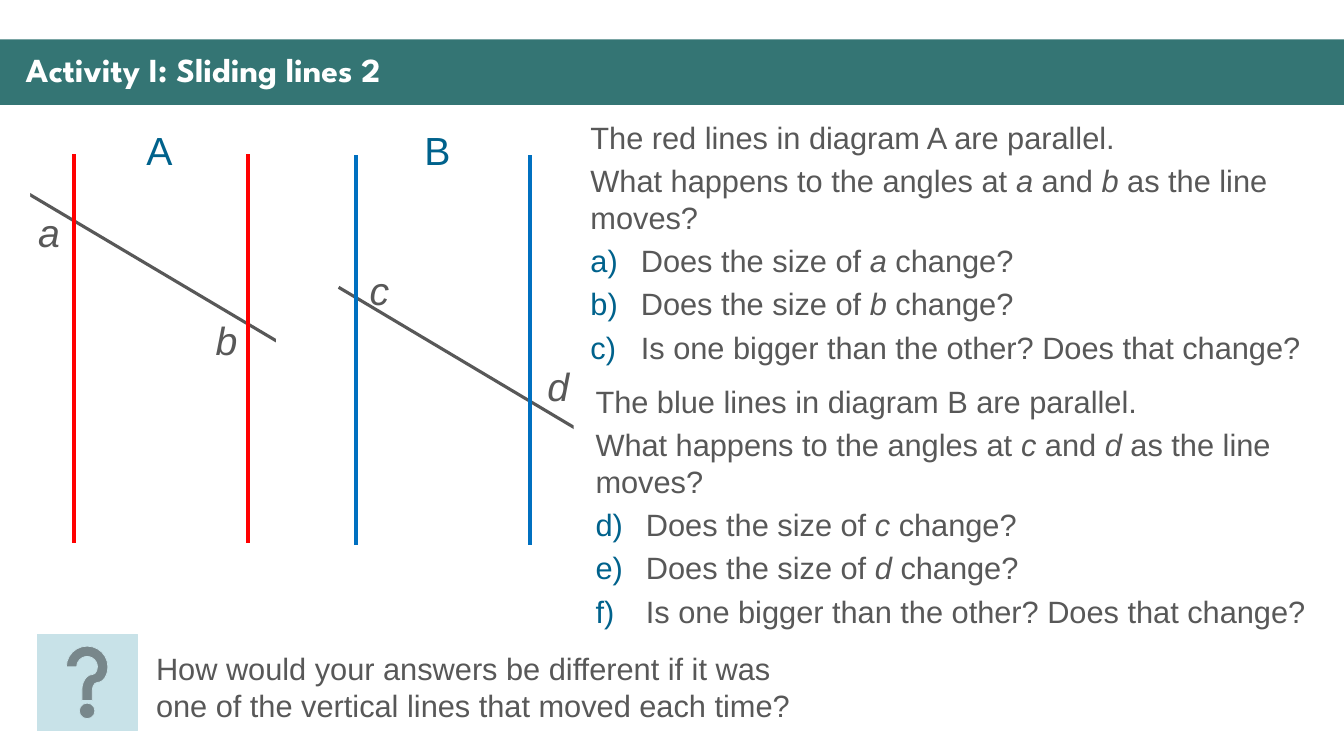
"""Build the slide 'Sliding lines 2': two parallel-line diagrams with questions."""
from dataclasses import dataclass

from lxml import etree
from pptx import Presentation
from pptx.dml.color import RGBColor
from pptx.enum.shapes import MSO_CONNECTOR, MSO_SHAPE
from pptx.enum.text import MSO_ANCHOR, PP_ALIGN
from pptx.oxml.ns import qn
from pptx.util import Pt

STRAIGHT = MSO_CONNECTOR.STRAIGHT
RECT, HELP = MSO_SHAPE.RECTANGLE, MSO_SHAPE.ACTION_BUTTON_HELP
MIDDLE, TOP = MSO_ANCHOR.MIDDLE, MSO_ANCHOR.TOP
LEFT, CENTER = PP_ALIGN.LEFT, PP_ALIGN.CENTER


@dataclass(frozen=True)
class Theme:
    """Colours, fonts and type sizes."""
    band: str = "347574"
    grey: str = "585858"
    accent: str = "00628C"
    red: str = "FF0000"
    blue: str = "0070C0"
    pale: str = "C8E2E8"
    white: str = "FFFFFF"
    body_font: str = "Arial"
    title_font: str = "League Spartan"
    title: int = 24
    label: int = 28
    body: int = 22
    gap: float = 4.4
    indent: int = 36


T = Theme()
TITLE = "Activity I: Sliding lines 2"
FOLLOW_UP = ("How would your answers be different if it was one of the "
             "vertical lines that moved each time?")
LABEL_H, LINE_SPACING = 41, 124.5

DIAGRAMS = [
    {"name": "A", "name_x": 92.9, "color": T.red, "x": 52.6, "y": (110.2, 388.1),
     "slant": (11.5, 133.2, 223.9, 259.2),
     "angles": [("a", 20.2, 145.4, 30.2), ("b", 146.9, 222.5, 30.2)],
     "masks": [(6.5, 81.4, 15.1, 371.5)]},
    {"name": "B", "name_x": 291.6, "color": T.blue, "x": 254.2, "y": (110.9, 389.5),
     "slant": (241.9, 205.2, 455.8, 332.6),
     "angles": [("c", 257, 186.5, 28.8), ("d", 383.8, 255.6, 35.3)],
     "masks": [(197.3, 109.4, 36.7, 396), (409.7, 109.4, 95.8, 396)]},
]

QUESTIONS = [
    {"color": "red", "diagram": "A", "angles": ("a", "b"), "start": 1,
     "box": (414.7, 81.4, 532.8, 188.6)},
    {"color": "blue", "diagram": "B", "angles": ("c", "d"), "start": 4,
     "box": (418.3, 270, 545, 188.6)},
]


def rgb(color):
    return RGBColor.from_string(color)


def apply(obj, values):
    for name, value in values.items():
        setattr(obj, name, value)


def add_line(shapes, x1, y1, x2, y2, color, width):
    s = shapes.add_connector(STRAIGHT, Pt(x1), Pt(y1), Pt(x2), Pt(y2))
    s.line.color.rgb = rgb(color)
    s.line.width = Pt(width)
    etree.SubElement(s._element.spPr, qn("a:effectLst"))


def add_block(shapes, box, fill, kind=RECT, outline=None):
    s = shapes.add_shape(kind, *map(Pt, box))
    s.shadow.inherit = False
    s.fill.solid()
    s.fill.fore_color.rgb = rgb(fill)
    if outline:
        s.line.color.rgb = rgb(outline)
        s.line.width = Pt(0.5)
    else:
        s.line.fill.background()
    return s


def add_runs(p, text, size, color=T.grey, font=T.body_font, bold=False):
    """Write text into a paragraph; parts between asterisks are italic."""
    for i, part in enumerate(text.split("*")):
        if part:
            r = p.add_run()
            r.text = part
            apply(r.font, {"name": font, "size": Pt(size),
                           "bold": bold, "italic": i % 2 == 1})
            r.font.color.rgb = rgb(color)


def add_text(shapes, box, text, size, align=LEFT, anchor=TOP, wrap=True, **look):
    s = shapes.add_textbox(*map(Pt, box))
    tf = s.text_frame
    apply(tf, {"word_wrap": wrap, "vertical_anchor": anchor})
    p = tf.paragraphs[0]
    p.alignment = align
    add_runs(p, text, size, **look)
    return s


def number(p, start):
    pPr = p._p.get_or_add_pPr()
    pPr.set("marL", str(Pt(T.indent)))
    pPr.set("indent", str(-Pt(T.indent)))
    color = etree.SubElement(pPr, qn("a:buClr"))
    etree.SubElement(color, qn("a:srgbClr"), val=T.accent)
    etree.SubElement(pPr, qn("a:buFont"), typeface="+mj-lt")
    etree.SubElement(pPr, qn("a:buAutoNum"), type="alphaLcParenR", startAt=str(start))


def add_questions(shapes, q):
    first, second = q["angles"]
    intro = [f"The {q['color']} lines in diagram {q['diagram']} are parallel.",
             f"What happens to the angles at *{first}* and *{second}* as the line moves?"]
    items = [f"Does the size of *{angle}* change?" for angle in q["angles"]]
    items.append("Is one bigger than the other? Does that change?")
    s = add_text(shapes, q["box"], intro[0], T.body)
    for text in intro[1:] + items:
        p = s.text_frame.add_paragraph()
        p.space_before = Pt(T.gap)
        if text in items:
            number(p, q["start"])
        add_runs(p, text, T.body)


def add_diagram(shapes, d):
    moving = shapes.add_group_shape().shapes
    add_line(moving, *d["slant"], T.grey, 2.25)
    for angle, x, y, w in d["angles"]:
        add_text(moving, (x, y, w, LABEL_H), f"*{angle}*", T.label, wrap=False)
    top, bottom = d["y"]
    for x in (d["x"], d["x"] + LINE_SPACING):
        add_line(shapes, x, top, x, bottom, d["color"], 3)
    for box in d["masks"]:
        add_block(shapes, box, T.white)


def main():
    prs = Presentation()
    apply(prs, {"slide_width": Pt(960), "slide_height": Pt(540)})
    shapes = prs.slides.add_slide(prs.slide_layouts[6]).shapes

    add_block(shapes, (0, 28.2, 960, 46.8), T.band)
    title = add_text(shapes, (11.5, 34.6, 938.9, 33.8), TITLE, T.title, anchor=MIDDLE,
                     color=T.white, font=T.title_font, bold=True)
    title.text_frame.paragraphs[0].line_spacing = 0.9

    for d in DIAGRAMS:
        add_diagram(shapes, d)
    for q in QUESTIONS:
        add_questions(shapes, q)

    add_block(shapes, (26.6, 452.9, 71.3, 69.1), T.pale, HELP, T.pale)
    add_text(shapes, (104.4, 460.8, 470.9, 60.5), FOLLOW_UP, T.body)
    for d in DIAGRAMS:
        add_text(shapes, (d["name_x"], 86.4, 41.8, LABEL_H), d["name"], T.label,
                 align=CENTER, color=T.accent)

    prs.save("out.pptx")


if __name__ == "__main__":
    main()
